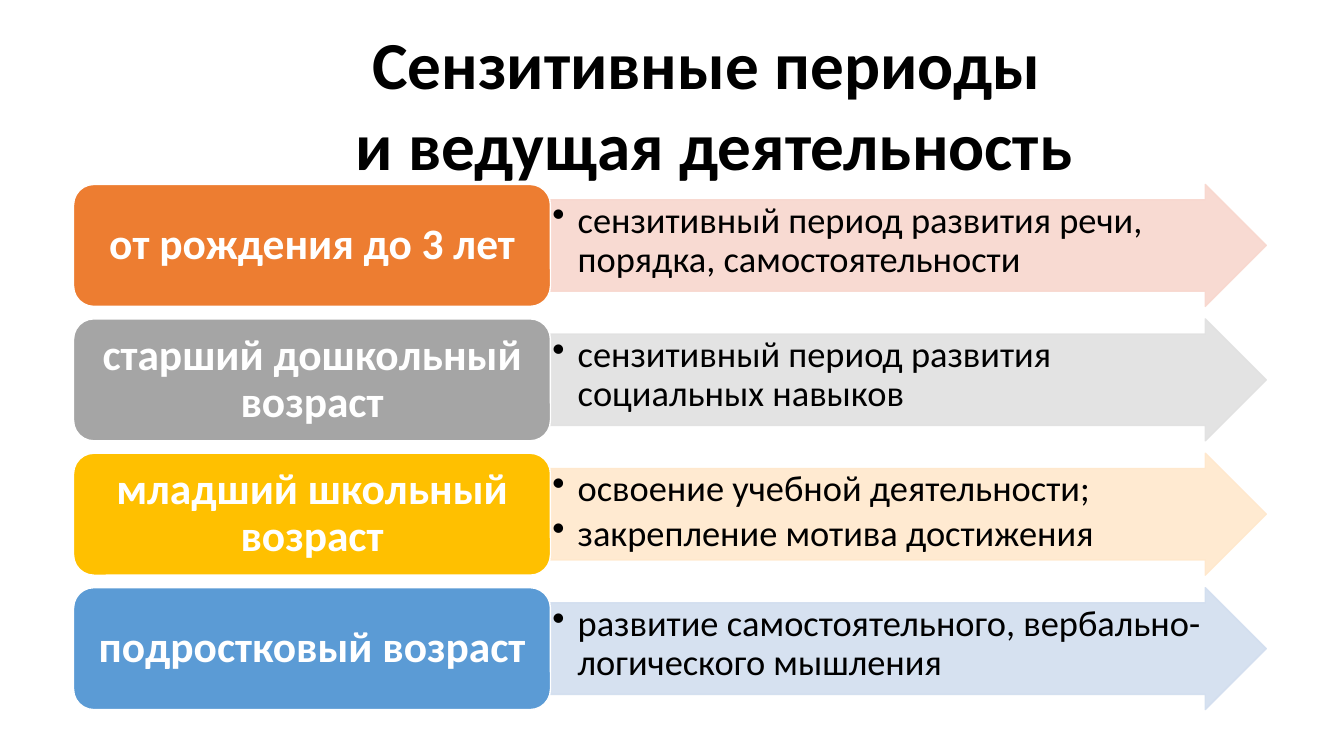
from dataclasses import dataclass

from lxml.etree import SubElement
from pptx import Presentation
from pptx.dml.color import RGBColor as Rgb
from pptx.enum.shapes import MSO_SHAPE as Kind
from pptx.enum.text import MSO_ANCHOR as Anchor, MSO_AUTO_SIZE as Auto, PP_ALIGN as Align
from pptx.oxml.ns import qn
from pptx.util import Inches, Pt

WIDE, HIGH = 13.33, 7.5
FONT = "Calibri"
# Grid: label column, arrow column, and evenly spaced rows
LEFT, SPLIT, RIGHT = 0.73, 5.46, 12.56
TOP, PITCH, TALL = 1.83, 1.3333, 1.21


@dataclass
class Stage:
    label: str
    notes: str
    dark: str
    pale: str


STAGES = [
    Stage("от рождения до 3 лет",
          "сензитивный период развития речи, порядка, самостоятельности",
          "ED7D31", "F8D7CE"),
    Stage("старший дошкольный возраст",
          "сензитивный период развития социальных навыков",
          "A5A5A5", "E1E1E1"),
    Stage("младший школьный возраст",
          "освоение учебной деятельности;\nзакрепление мотива достижения",
          "FFC000", "FFE8CC"),
    Stage("подростковый возраст",
          "развитие самостоятельного, вербально-логического мышления",
          "5B9BD5", "D2DEEF"),
]


def paint(form, tone: str) -> None:
    """Give a fill or a font colour object a solid hex colour."""
    form.solid()
    form.fore_color.rgb = Rgb.from_string(tone)


def fade(shape, share: int) -> None:
    """Make fill and line opaque to the given percentage."""
    for tint in shape._element.spPr.iter(qn("a:srgbClr")):
        SubElement(tint, qn("a:alpha"), val=str(share * 1000))


def style(frame, size: int, tone: str, bold: bool, align, gap: float = 0, lead: float = 1) -> None:
    for para in frame.paragraphs:
        para.alignment = align
        para.line_spacing = lead
        para.space_after = Pt(gap)
        for run in para.runs:
            run.font.name, run.font.size, run.font.bold = FONT, Pt(size), bold
            paint(run.font.fill, tone)


def bullet(para) -> None:
    para.level = 1
    props = para._p.get_or_add_pPr()
    props.set("marL", str(Inches(0.25)))
    props.set("indent", str(-Inches(0.25)))
    SubElement(props, qn("a:buChar"), char="•")


def block(slide, kind, left: float, right: float, top: float, fill: str, line: str,
          text: str, pad: tuple[float, float], anchor):
    shape = slide.shapes.add_shape(
        kind, Inches(left), Inches(top), Inches(right - left), Inches(TALL))
    shape.shadow.inherit = False
    paint(shape.fill, fill)
    paint(shape.line.fill, line)
    shape.line.width = Pt(1)
    frame = shape.text_frame
    frame.text = text
    frame.word_wrap = True
    frame.vertical_anchor = anchor
    frame.margin_left = frame.margin_right = Inches(pad[0])
    frame.margin_top = frame.margin_bottom = Inches(pad[1])
    return shape


def draw(slide, stage: Stage, row: int) -> None:
    top = TOP + row * PITCH
    arrow = block(slide, Kind.RIGHT_ARROW, SPLIT, RIGHT, top, stage.pale, stage.pale,
                  stage.notes, (0.02, 0.02), Anchor.TOP)
    arrow.adjustments[0], arrow.adjustments[1] = 0.75, 0.5
    fade(arrow, 90)
    for para in arrow.text_frame.paragraphs:
        bullet(para)
    style(arrow.text_frame, 26, "000000", False, Align.LEFT, gap=4, lead=0.9)

    label = block(slide, Kind.ROUNDED_RECTANGLE, LEFT, SPLIT, top, stage.dark, "FFFFFF",
                  stage.label, (0.13, 0.06), Anchor.MIDDLE)
    style(label.text_frame, 31, "FFFFFF", True, Align.CENTER, lead=0.9)


def head(slide) -> None:
    title = slide.shapes.title
    title.left, title.top = Inches(1.95), Inches(0.4)
    title.width, title.height = Inches(10.27), Inches(1.25)
    frame = title.text_frame
    frame.text = "Сензитивные периоды \nи ведущая деятельность"
    frame.auto_size = Auto.NONE
    frame.vertical_anchor = Anchor.MIDDLE
    style(frame, 48, "000000", True, Align.CENTER)


def main() -> None:
    deck = Presentation()
    deck.slide_width, deck.slide_height = Inches(WIDE), Inches(HIGH)
    slide = deck.slides.add_slide(deck.slide_layouts[5])
    head(slide)
    for row, stage in enumerate(STAGES):
        draw(slide, stage, row)
    deck.save("out.pptx")


if __name__ == "__main__":
    main()
